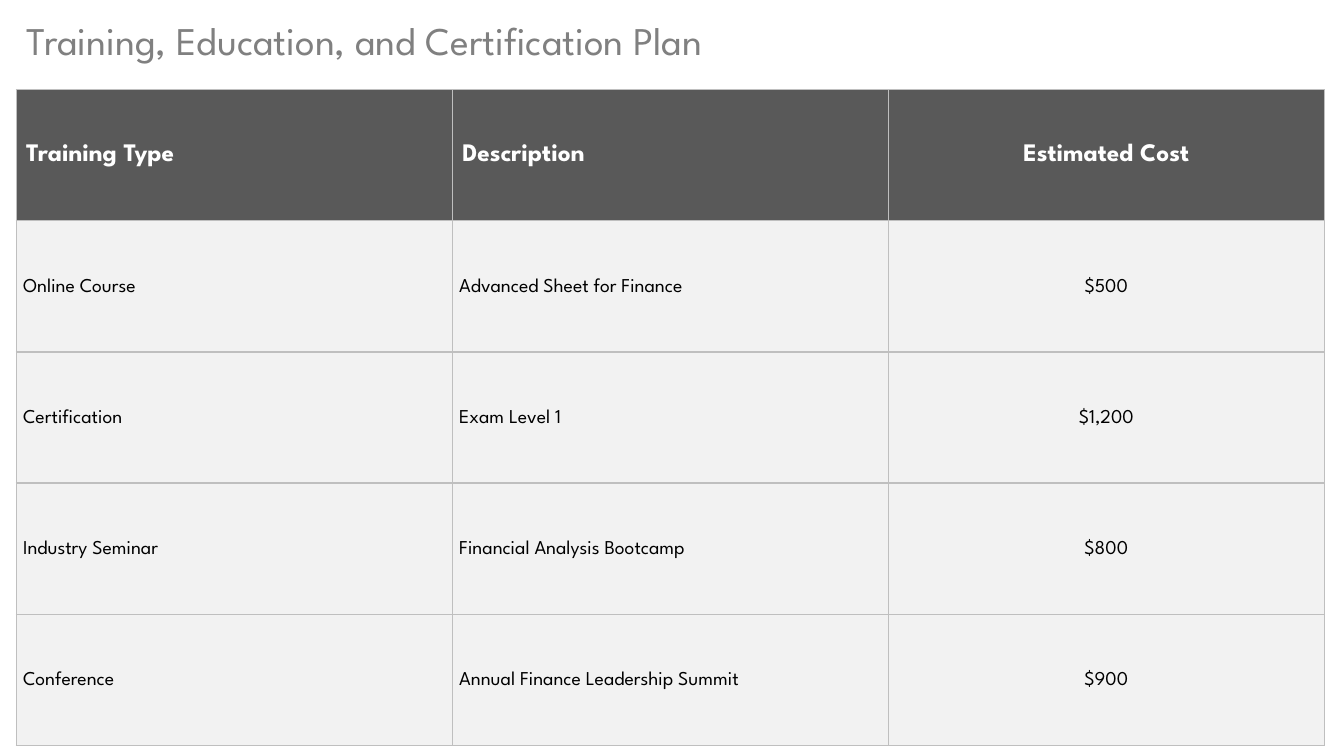
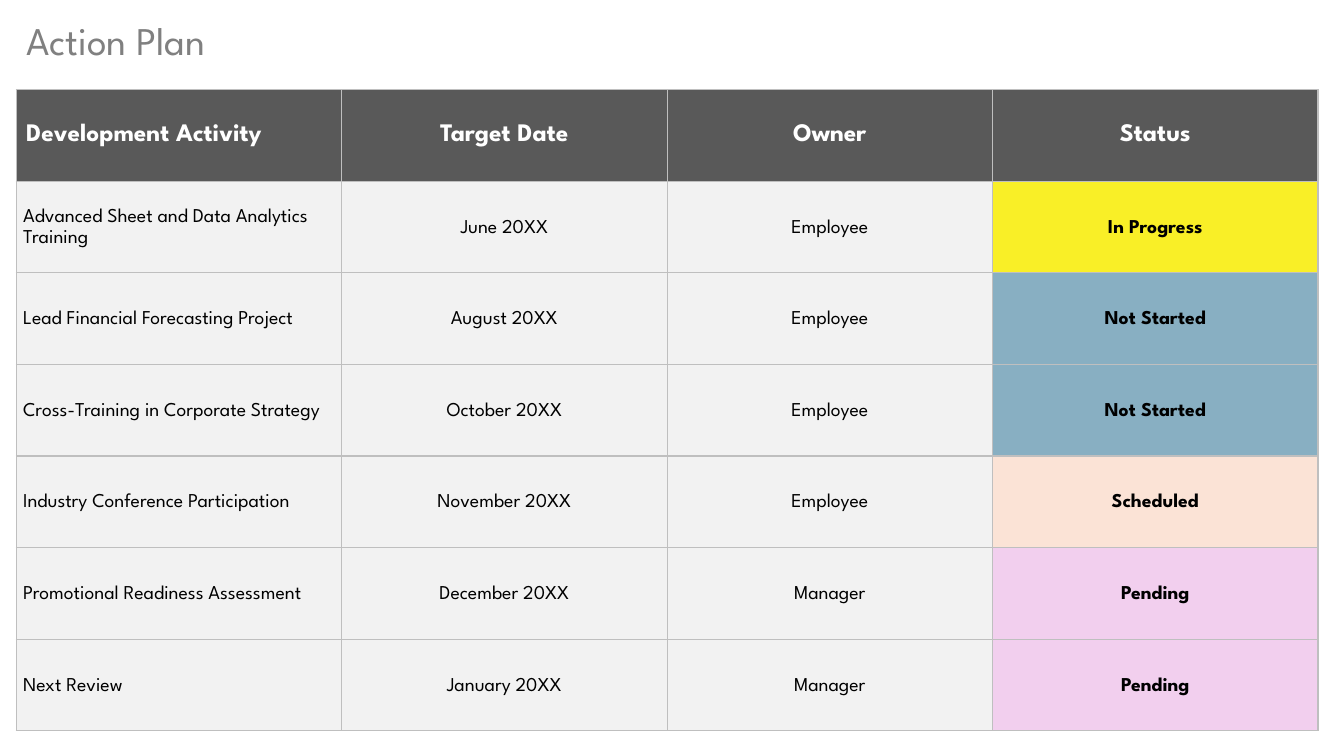
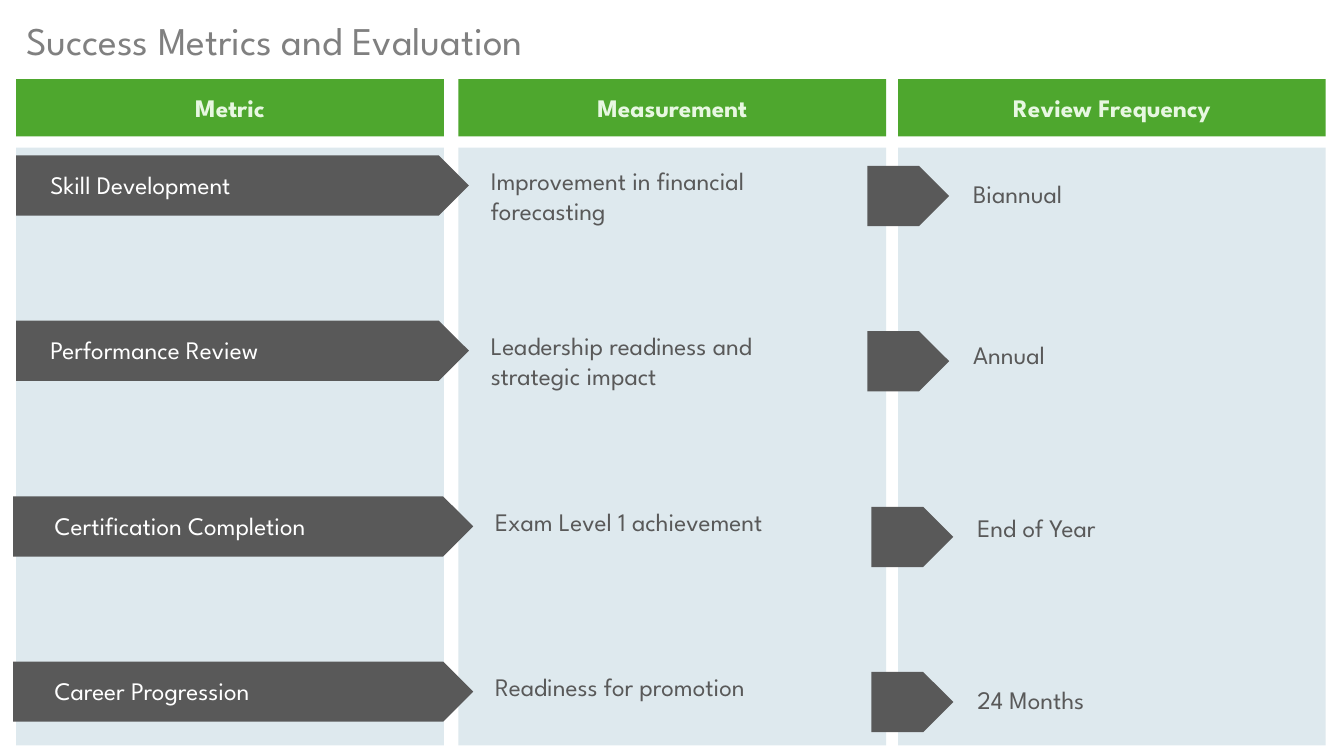
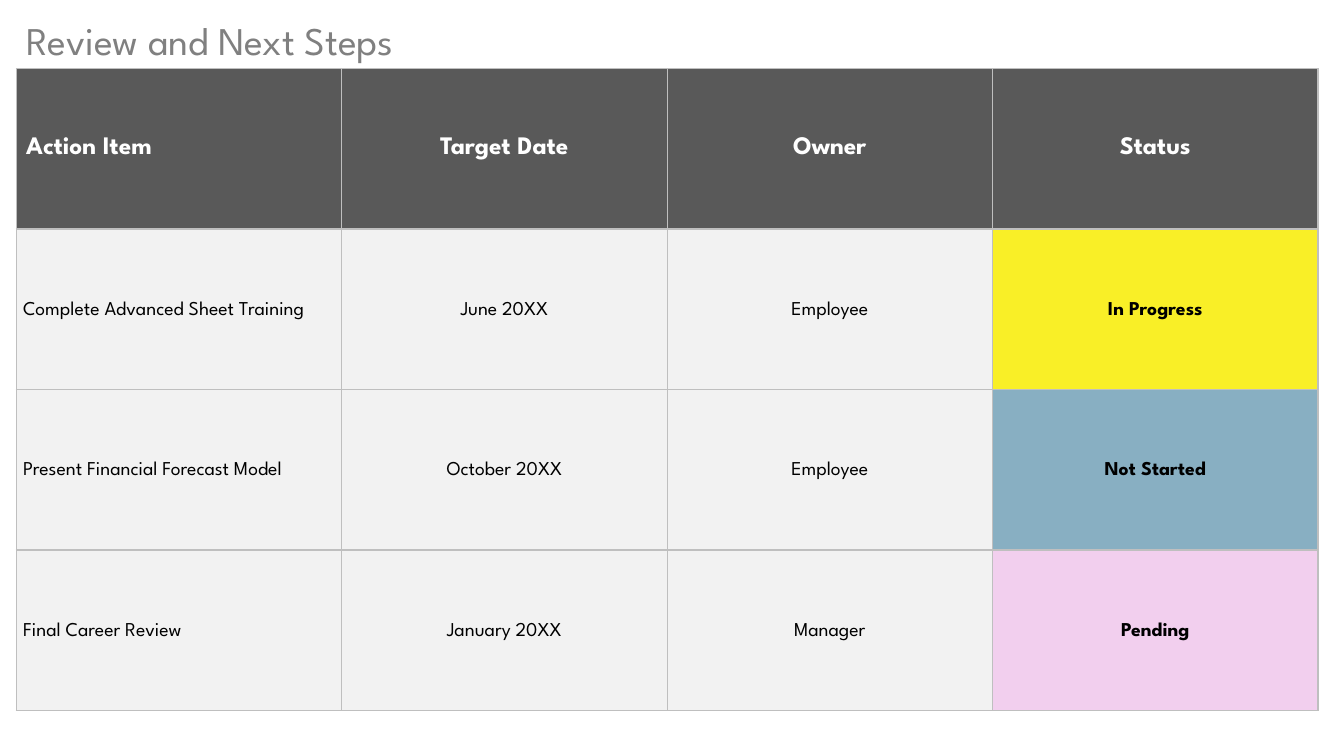
from lxml import etree
from pptx import Presentation
from pptx import util as u
from pptx.dml.color import RGBColor
from pptx.enum import shapes, text
from pptx.oxml.ns import qn

FONT = "League Spartan"
WHITE = RGBColor(0xFF, 0xFF, 0xFF)
BLACK = RGBColor(0x00, 0x00, 0x00)
TITLE_GRAY = RGBColor(0x80, 0x80, 0x80)
DARK_GRAY = RGBColor(0x59, 0x59, 0x59)
CELL_GRAY = RGBColor(0xF2, 0xF2, 0xF2)
BORDER_GRAY = RGBColor(0xBF, 0xBF, 0xBF)
GREEN = RGBColor(0x4E, 0xA7, 0x2E)
PALE_GREEN = RGBColor(0xE7, 0xF7, 0xE1)
PALE_BLUE = RGBColor(0xDE, 0xE9, 0xEE)
STATUS_FILLS = {
    "In Progress": RGBColor(0xF9, 0xEF, 0x27),
    "Not Started": RGBColor(0x88, 0xAF, 0xC2),
    "Scheduled": RGBColor(0xFB, 0xE3, 0xD6),
    "Pending": RGBColor(0xF2, 0xCF, 0xEE),
}
LEFT = 11.5
RECTANGLE = shapes.MSO_SHAPE.RECTANGLE
PENTAGON = shapes.MSO_SHAPE.PENTAGON
CENTER = text.PP_ALIGN.CENTER


class Deck:
    """Holds the shared style and the slide being built."""

    def __init__(self):
        self.presentation = Presentation()
        self.presentation.slide_width = u.Pt(960)
        self.presentation.slide_height = u.Pt(540)
        self.slide = None

    def start_slide(self, title):
        self.slide = self.presentation.slides.add_slide(self.presentation.slide_layouts[6])
        self.label(title, LEFT, 8, 934.5, 41, TITLE_GRAY, size=28)

    def add_text(self, paragraph, words, color, size, bold=False, centered=False):
        paragraph.alignment = CENTER if centered else text.PP_ALIGN.LEFT
        run = paragraph.add_run()
        run.text = words
        run.font.name = FONT
        run.font.size = u.Pt(size)
        run.font.bold = bold
        run.font.color.rgb = color

    def label(self, words, left, top, width, height, color, size=18, bold=False, centered=False):
        box = self.slide.shapes.add_textbox(u.Pt(left), u.Pt(top), u.Pt(width), u.Pt(height))
        box.text_frame.word_wrap = True
        box.text_frame.auto_size = text.MSO_AUTO_SIZE.SHAPE_TO_FIT_TEXT
        self.add_text(box.text_frame.paragraphs[0], words, color, size, bold, centered)

    def block(self, kind, left, top, width, height, color):
        shape = self.slide.shapes.add_shape(kind, u.Pt(left), u.Pt(top), u.Pt(width), u.Pt(height))
        shape.shadow.inherit = False
        shape.fill.solid()
        shape.fill.fore_color.rgb = color
        shape.line.fill.background()

    def border(self, cell):
        properties = cell._tc.get_or_add_tcPr()
        for side in ("a:lnL", "a:lnR", "a:lnT", "a:lnB"):
            line = etree.SubElement(properties, qn(side), w=str(u.Pt(1)))
            fill = etree.SubElement(line, qn("a:solidFill"))
            etree.SubElement(fill, qn("a:srgbClr"), val=str(BORDER_GRAY))

    def cell(self, cell, words, header, centered):
        self.border(cell)
        cell.vertical_anchor = text.MSO_ANCHOR.MIDDLE
        cell.fill.solid()
        paragraph = cell.text_frame.paragraphs[0]
        if header:
            cell.fill.fore_color.rgb = DARK_GRAY
            self.add_text(paragraph, words, WHITE, 18, True, centered)
            return
        cell.fill.fore_color.rgb = STATUS_FILLS.get(words, CELL_GRAY)
        cell.margin_left = cell.margin_right = u.Pt(5)
        cell.margin_top = cell.margin_bottom = 0
        paragraph.line_spacing = 1.15
        paragraph.space_after = u.Pt(8)
        self.add_text(paragraph, words, BLACK, 14, words in STATUS_FILLS, centered)

    def table(self, rows, top, width, height, first_centered=1):
        frame = self.slide.shapes.add_table(
            len(rows), len(rows[0]), u.Pt(LEFT), u.Pt(top), u.Pt(width), u.Pt(height))
        table = frame.table
        table.first_row = table.horz_banding = False
        for row_index, row in enumerate(rows):
            for column_index, words in enumerate(row):
                self.cell(table.cell(row_index, column_index), words,
                          row_index == 0, column_index >= first_centered)


def training_plan(deck):
    deck.start_slide("Training, Education, and Certification Plan")
    deck.table([
        ("Training Type", "Description", "Estimated Cost"),
        ("Online Course", "Advanced Sheet for Finance", "$500"),
        ("Certification", "Exam Level 1", "$1,200"),
        ("Industry Seminar", "Financial Analysis Bootcamp", "$800"),
        ("Conference", "Annual Finance Leadership Summit", "$900"),
    ], 64, 934.5, 468.5, first_centered=2)


def action_plan(deck):
    deck.start_slide("Action Plan")
    deck.table([
        ("Development Activity", "Target Date", "Owner", "Status"),
        ("Advanced Sheet and Data Analytics Training", "June 20XX", "Employee", "In Progress"),
        ("Lead Financial Forecasting Project", "August 20XX", "Employee", "Not Started"),
        ("Cross-Training in Corporate Strategy", "October 20XX", "Employee", "Not Started"),
        ("Industry Conference Participation", "November 20XX", "Employee", "Scheduled"),
        ("Promotional Readiness Assessment", "December 20XX", "Manager", "Pending"),
        ("Next Review", "January 20XX", "Manager", "Pending"),
    ], 64, 930, 458)


def success_metrics(deck):
    deck.start_slide("Success Metrics and Evaluation")
    columns = [("Metric", LEFT), ("Measurement", 327.5), ("Review Frequency", 641.5)]
    for heading, left in columns:
        deck.block(RECTANGLE, left, 56.5, 305.5, 41, GREEN)
        deck.label(heading, left, 62.25, 305.5, 29, PALE_GREEN, bold=True, centered=True)
        deck.block(RECTANGLE, left, 105.5, 305.5, 427, PALE_BLUE)

    metrics = [
        ("Skill Development", "Improvement in financial forecasting", "Biannual", 111, 0, 13),
        ("Performance Review", "Leadership readiness and strategic impact", "Annual", 229, 0, 10),
        ("Certification Completion", "Exam Level 1 achievement", "End of Year", 354.5, 3, 8),
        ("Career Progression", "Readiness for promotion", "24 Months", 472.5, 3, 13),
    ]
    for metric, measurement, frequency, top, shift, drop in metrics:
        deck.block(PENTAGON, LEFT - shift * 0.7, top, 323.5 + shift * 1.7, 43, DARK_GRAY)
        deck.label(metric, 29 + shift, top + 6.5, 297, 29, WHITE)
        deck.label(measurement, 343.5 + shift, top + 3.5, 267, 29, DARK_GRAY)
        deck.block(PENTAGON, 619.5 + shift, top + 7.5, 58.5, 43, DARK_GRAY)
        deck.label(frequency, 688 + shift, top + drop, 264, 29, DARK_GRAY)


def next_steps(deck):
    deck.start_slide("Review and Next Steps")
    deck.table([
        ("Action Item", "Target Date", "Owner", "Status"),
        ("Complete Advanced Sheet Training", "June 20XX", "Employee", "In Progress"),
        ("Present Financial Forecast Model", "October 20XX", "Employee", "Not Started"),
        ("Final Career Review", "January 20XX", "Manager", "Pending"),
    ], 49, 930, 458.5)


def main():
    deck = Deck()
    for build in (training_plan, action_plan, success_metrics, next_steps):
        build(deck)
    deck.presentation.save("out.pptx")


if __name__ == "__main__":
    main()
